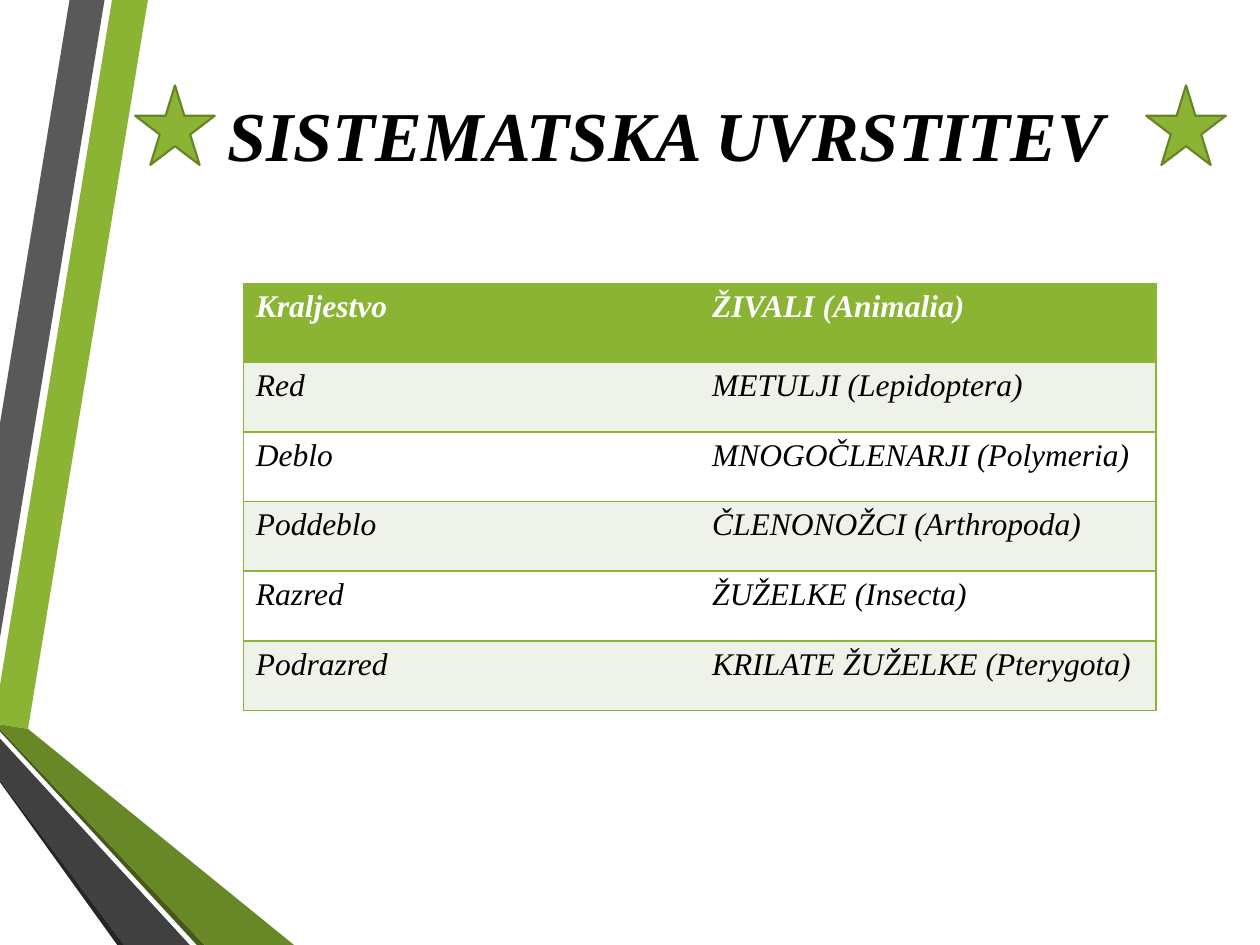
from collections import namedtuple

from lxml import etree
from pptx import Presentation
from pptx import util as u
from pptx.dml.color import RGBColor
from pptx.enum import shapes, text
from pptx.oxml import ns

Theme = namedtuple("Theme", "font title_size cell_size green outline band white black")
theme = Theme("Times New Roman", 40, 18, "8BB434", "678526", "EEF2E8", "FFFFFF", "000000")


def write(frame, wording, *, size, color, bold=False, align=text.PP_ALIGN.LEFT):
    para = frame.paragraphs[0]
    para.alignment = align
    span = para.add_run()
    span.text = wording
    span.font.name = theme.font
    span.font.size = u.Pt(size)
    span.font.bold = bold
    span.font.italic = True
    span.font.color.rgb = RGBColor.from_string(color)


def add_border(cell, side, color):
    line = etree.SubElement(cell._tc.get_or_add_tcPr(), ns.qn(f"a:ln{side}"), w=str(u.Pt(1)))
    if color is None:
        etree.SubElement(line, ns.qn("a:noFill"))
    else:
        fill = etree.SubElement(line, ns.qn("a:solidFill"))
        etree.SubElement(fill, ns.qn("a:srgbClr"), val=color)


deck = Presentation()
deck.slide_width, deck.slide_height = u.Pt(720), u.Pt(540)
page = deck.slides.add_slide(deck.slide_layouts[5])

# Ribbons along the left edge
ribbons = [
    (theme.green, [(0, 391.5), (0, 414), (16, 416.5), (84.5, 0), (64, 0)]),
    ("595959", [(59.75, 0), (39.75, 0), (0, 242), (0, 364.5)]),
    ("262626", [(0, 445.5), (0, 447), (67, 540), (71, 540)]),
    ("465A1A", [(0, 416.5), (0, 418), (112.5, 540), (117, 540)]),
    ("688727", [(0, 416.5), (117, 540), (168, 540), (16, 416.5), (0, 414)]),
    ("404040", [(0, 445.5), (71, 540), (108.5, 540), (0, 422)]),
]
for color, points in ribbons:
    corners = [(u.Pt(x), u.Pt(y)) for x, y in points]
    builder = page.shapes.build_freeform(*corners[0])
    builder.add_line_segments(corners[1:], close=True)
    ribbon = builder.convert_to_shape()
    ribbon.shadow.inherit = False
    ribbon.fill.solid()
    ribbon.fill.fore_color.rgb = RGBColor.from_string(color)
    ribbon.line.fill.background()

# Title
title = page.shapes.title
title.left, title.top, title.width, title.height = u.Pt(77), u.Pt(36), u.Pt(607), u.Pt(81)
title.text_frame.auto_size = text.MSO_AUTO_SIZE.NONE
title.text_frame.vertical_anchor = text.MSO_ANCHOR.MIDDLE
write(title.text_frame, "SISTEMATSKA UVRSTITEV", size=theme.title_size,
      color=theme.black, bold=True, align=text.PP_ALIGN.CENTER)

# Classification table
rows = [
    ("Kraljestvo", "ŽIVALI (Animalia)"),
    ("Red", "METULJI (Lepidoptera)"),
    ("Deblo", "MNOGOČLENARJI (Polymeria)"),
    ("Poddeblo", "ČLENONOŽCI (Arthropoda)"),
    ("Razred", "ŽUŽELKE (Insecta)"),
    ("Podrazred", "KRILATE ŽUŽELKE (Pterygota)"),
]
header_height, row_height = 45, 39.8
table = page.shapes.add_table(
    len(rows), 2, u.Pt(139), u.Pt(162), u.Pt(521.6),
    u.Pt(header_height + row_height * (len(rows) - 1))).table
for row_index, row in enumerate(rows):
    is_header = row_index == 0
    table.rows[row_index].height = u.Pt(header_height if is_header else row_height)
    if is_header:
        fill_color = theme.green
    else:
        fill_color = theme.band if row_index % 2 else theme.white
    for column_index, wording in enumerate(row):
        cell = table.cell(row_index, column_index)
        is_left = column_index == 0
        add_border(cell, "L", theme.green if is_left else None)
        add_border(cell, "R", None if is_left else theme.green)
        add_border(cell, "T", theme.green)
        add_border(cell, "B", theme.green)
        cell.fill.solid()
        cell.fill.fore_color.rgb = RGBColor.from_string(fill_color)
        write(cell.text_frame, wording, size=theme.cell_size, bold=is_header,
              color=theme.white if is_header else theme.black)

# Stars on both sides of the title
for left in (77.25, 655):
    star = page.shapes.add_shape(
        shapes.MSO_SHAPE.STAR_5_POINT, u.Pt(left), u.Pt(48.75), u.Pt(45.5), u.Pt(45.5))
    star.shadow.inherit = False
    star.fill.solid()
    star.fill.fore_color.rgb = RGBColor.from_string(theme.green)
    star.line.color.rgb = RGBColor.from_string(theme.outline)
    star.line.width = u.Pt(1.25)

deck.save("out.pptx")
